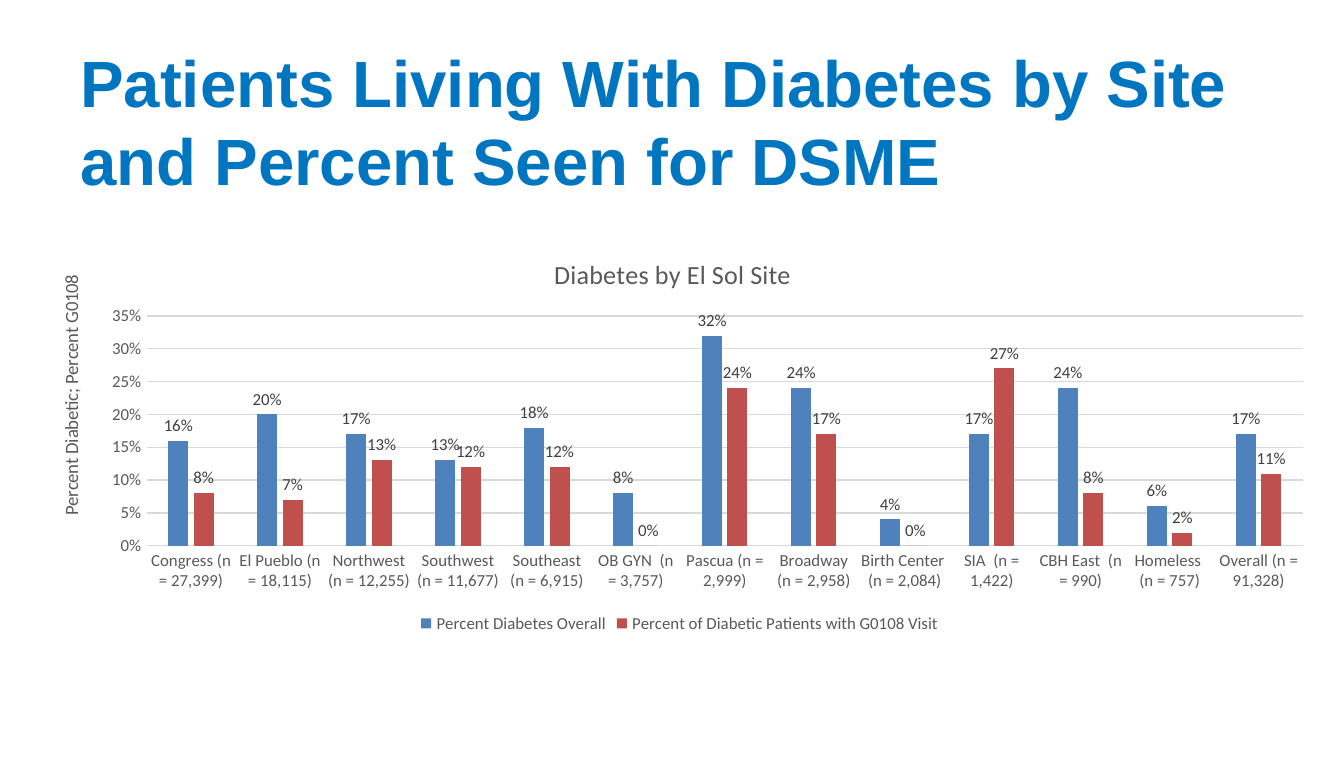
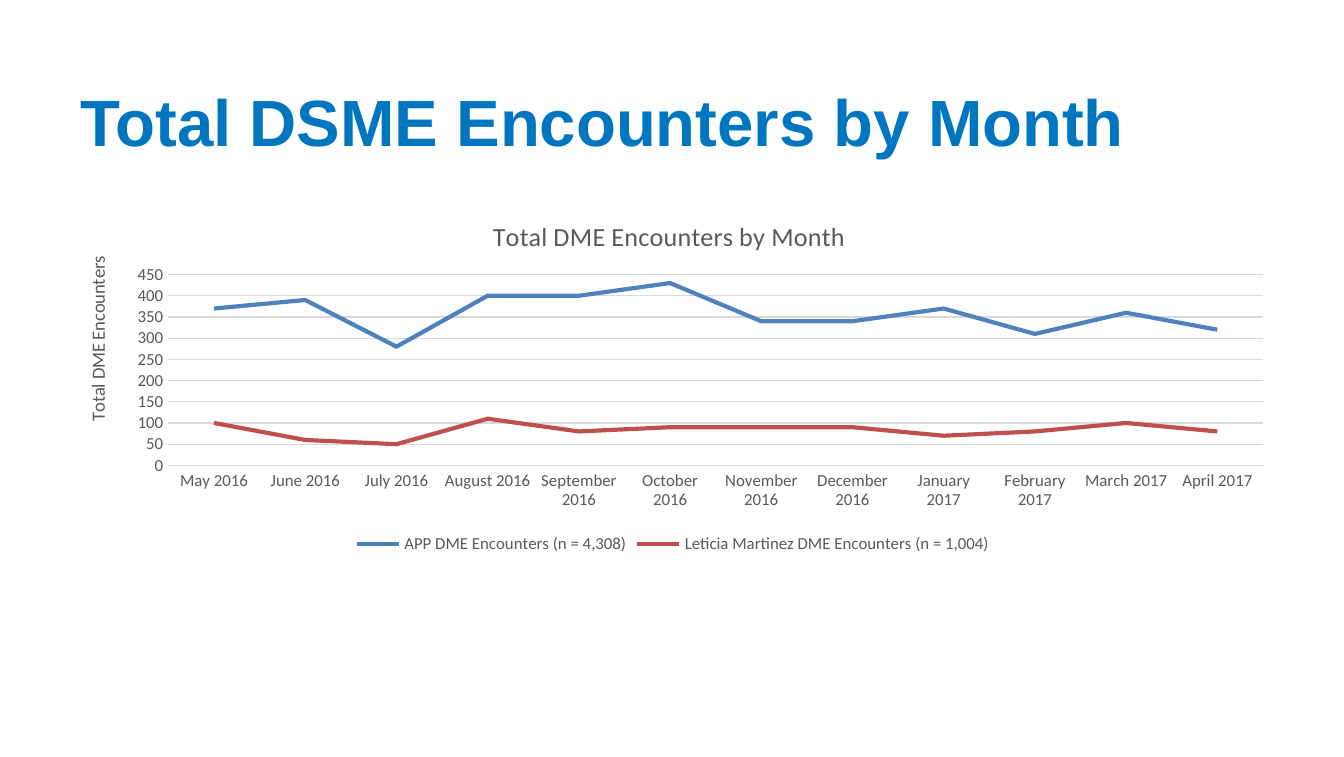
from dataclasses import dataclass

from lxml.etree import SubElement
from pptx import Presentation
from pptx.chart.data import CategoryChartData
from pptx.dml.color import RGBColor
from pptx.enum.chart import XL_CHART_TYPE, XL_LABEL_POSITION, XL_LEGEND_POSITION, XL_TICK_MARK
from pptx.enum.text import MSO_ANCHOR
from pptx.oxml.ns import qn
from pptx.util import Pt

# Shared style
TITLE_BLUE = RGBColor(0x00, 0x76, 0xC0)
TEXT_GRAY = RGBColor(0x59, 0x59, 0x59)
LABEL_GRAY = RGBColor(0x40, 0x40, 0x40)
GRID_GRAY = RGBColor(0xD9, 0xD9, 0xD9)
SERIES_COLORS = (RGBColor(0x4F, 0x81, 0xBD), RGBColor(0xC0, 0x50, 0x4D))
TITLE_FONT = "Arial"
CHART_FONT = "Calibri"


@dataclass(frozen=True)
class Box:
    left: float
    top: float
    width: float
    height: float


@dataclass(frozen=True)
class ChartSlide:
    """One headline and one chart; plot and title places are chart fractions."""
    headline: str
    chart_type: XL_CHART_TYPE
    frame: Box
    plot: Box
    chart_title: str
    chart_title_at: tuple[float, float]
    axis_title: str
    axis_title_at: tuple[float, float]
    number_format: str
    axis_maximum: float
    axis_step: float
    categories: tuple[str, ...]
    series: dict[str, tuple[float, ...]]


TITLE_BOX = Box(36, 45.36, 648, 38.16)

SITES = ChartSlide(
    headline="Patients Living With Diabetes by Site and Percent Seen for DSME",
    chart_type=XL_CHART_TYPE.COLUMN_CLUSTERED,
    frame=Box(15.84, 126, 696.24, 216),
    plot=Box(0.09, 0.2, 0.89, 0.57),
    chart_title="Diabetes by El Sol Site",
    chart_title_at=(0.4, 0.04),
    axis_title="Percent Diabetic; Percent G0108",
    axis_title_at=(0.02, 0.09),
    number_format="0%",
    axis_maximum=0.35,
    axis_step=0.05,
    categories=(
        "Congress (n = 27,399)", "El Pueblo (n = 18,115)", "Northwest (n = 12,255)",
        "Southwest (n = 11,677)", "Southeast (n = 6,915)", "OB GYN  (n = 3,757)",
        "Pascua (n = 2,999)", "Broadway (n = 2,958)", "Birth Center  (n = 2,084)",
        "SIA  (n = 1,422)", "CBH East  (n = 990)", "Homeless  (n = 757)",
        "Overall (n = 91,328)",
    ),
    series={
        "Percent Diabetes Overall": (
            0.16, 0.2, 0.17, 0.13, 0.18, 0.08, 0.32, 0.24, 0.04, 0.17, 0.24, 0.06, 0.17),
        "Percent of Diabetic Patients with G0108 Visit": (
            0.08, 0.07, 0.13, 0.12, 0.12, 0, 0.24, 0.17, 0, 0.27, 0.08, 0.02, 0.11),
    },
)

MONTHS = ChartSlide(
    headline="Total DSME Encounters by Month",
    chart_type=XL_CHART_TYPE.LINE,
    frame=Box(30.96, 106.56, 658.8, 192.96),
    plot=Box(0.09, 0.21, 0.89, 0.53),
    chart_title="Total DME Encounters by Month",
    chart_title_at=(0.35, 0.04),
    axis_title="Total DME Encounters",
    axis_title_at=(0.02, 0.15),
    number_format="General",
    axis_maximum=450,
    axis_step=50,
    categories=(
        "May 2016", "June 2016", "July 2016", "August 2016", "September 2016",
        "October 2016", "November 2016", "December 2016", "January 2017",
        "February 2017", "March 2017", "April 2017",
    ),
    series={
        "APP DME Encounters (n = 4,308)": (
            370, 390, 280, 400, 400, 430, 340, 340, 370, 310, 360, 320),
        "Leticia Martinez DME Encounters (n = 1,004)": (
            100, 60, 50, 110, 80, 90, 90, 90, 70, 80, 100, 80),
    },
)


def style_font(font, size: float, color: RGBColor, name: str = CHART_FONT,
               bold: bool = False) -> None:
    font.name = name
    font.size = Pt(size)
    font.bold = bold
    font.color.rgb = color


def points(box: Box) -> tuple[Pt, Pt, Pt, Pt]:
    return Pt(box.left), Pt(box.top), Pt(box.width), Pt(box.height)


def set_layout(parent, index: int, **values) -> None:
    """Give a chart part a manual layout as its child number index."""
    for old_layout in parent.findall(qn("c:layout")):
        parent.remove(old_layout)
    layout = SubElement(parent, qn("c:layout"))
    manual = SubElement(layout, qn("c:manualLayout"))
    for tag, value in values.items():
        SubElement(manual, qn(f"c:{tag}")).set("val", str(value))
    parent.insert(index, layout)


def add_headline(slide, text: str) -> None:
    frame = slide.shapes.add_textbox(*points(TITLE_BOX)).text_frame
    frame.word_wrap = True
    frame.vertical_anchor = MSO_ANCHOR.MIDDLE
    run = frame.paragraphs[0].add_run()
    run.text = text
    style_font(run.font, 35, TITLE_BLUE, TITLE_FONT, bold=True)


def set_title(title, text: str, size: float, place: tuple[float, float]) -> None:
    run = title.text_frame.paragraphs[0].add_run()
    run.text = text
    style_font(run.font, size, TEXT_GRAY)
    set_layout(title.element, 1, xMode="edge", yMode="edge", x=place[0], y=place[1])


def style_axes(chart, content: ChartSlide) -> None:
    for axis in (chart.category_axis, chart.value_axis):
        axis.major_tick_mark = axis.minor_tick_mark = XL_TICK_MARK.NONE
        style_font(axis.tick_labels.font, 9, TEXT_GRAY)
    value_axis = chart.value_axis
    value_axis.minimum_scale = 0
    value_axis.maximum_scale = content.axis_maximum
    value_axis.major_unit = content.axis_step
    value_axis.tick_labels.number_format = content.number_format
    value_axis.tick_labels.number_format_is_linked = False
    value_axis.format.line.fill.background()
    for line in (chart.category_axis.format.line, value_axis.major_gridlines.format.line):
        line.color.rgb = GRID_GRAY
        line.width = Pt(0.75)
    set_title(value_axis.axis_title, content.axis_title, 10, content.axis_title_at)
    body = value_axis.axis_title.element.find(".//" + qn("a:bodyPr"))
    body.set("rot", "-5400000")
    body.set("vert", "horz")


def style_series(chart, content: ChartSlide) -> None:
    plot = chart.plots[0]
    plot.vary_by_categories = False
    is_line = content.chart_type == XL_CHART_TYPE.LINE
    for series, color in zip(plot.series, SERIES_COLORS):
        if is_line:
            series.smooth = False
            series.format.line.color.rgb = color
            series.format.line.width = Pt(2.25)
        else:
            series.format.fill.solid()
            series.format.fill.fore_color.rgb = color
            labels = series.data_labels
            labels.show_value = True
            labels.position = XL_LABEL_POSITION.OUTSIDE_END
            labels.number_format = content.number_format
            labels.number_format_is_linked = False
            style_font(labels.font, 9, LABEL_GRAY)
    if not is_line:
        plot.gap_width = 219
        plot.overlap = -27


def add_chart(slide, content: ChartSlide) -> None:
    data = CategoryChartData(number_format=content.number_format)
    data.categories = content.categories
    for name, values in content.series.items():
        data.add_series(name, values)
    chart = slide.shapes.add_chart(content.chart_type, *points(content.frame), data).chart
    style_font(chart.font, 10, TEXT_GRAY)
    chart.has_title = True
    set_title(chart.chart_title, content.chart_title, 14, content.chart_title_at)
    chart.has_legend = True
    chart.legend.position = XL_LEGEND_POSITION.BOTTOM
    chart.legend.include_in_layout = False
    style_font(chart.legend.font, 9, TEXT_GRAY)
    style_axes(chart, content)
    style_series(chart, content)
    plot = content.plot
    set_layout(chart.element.find(".//" + qn("c:plotArea")), 0,
               layoutTarget="inner", xMode="edge", yMode="edge",
               x=plot.left, y=plot.top, w=plot.width, h=plot.height)


def main() -> None:
    presentation = Presentation()
    presentation.slide_width = Pt(720)
    presentation.slide_height = Pt(405.36)
    for content in (SITES, MONTHS):
        slide = presentation.slides.add_slide(presentation.slide_layouts[6])
        add_headline(slide, content.headline)
        add_chart(slide, content)
    presentation.save("out.pptx")


if __name__ == "__main__":
    main()
